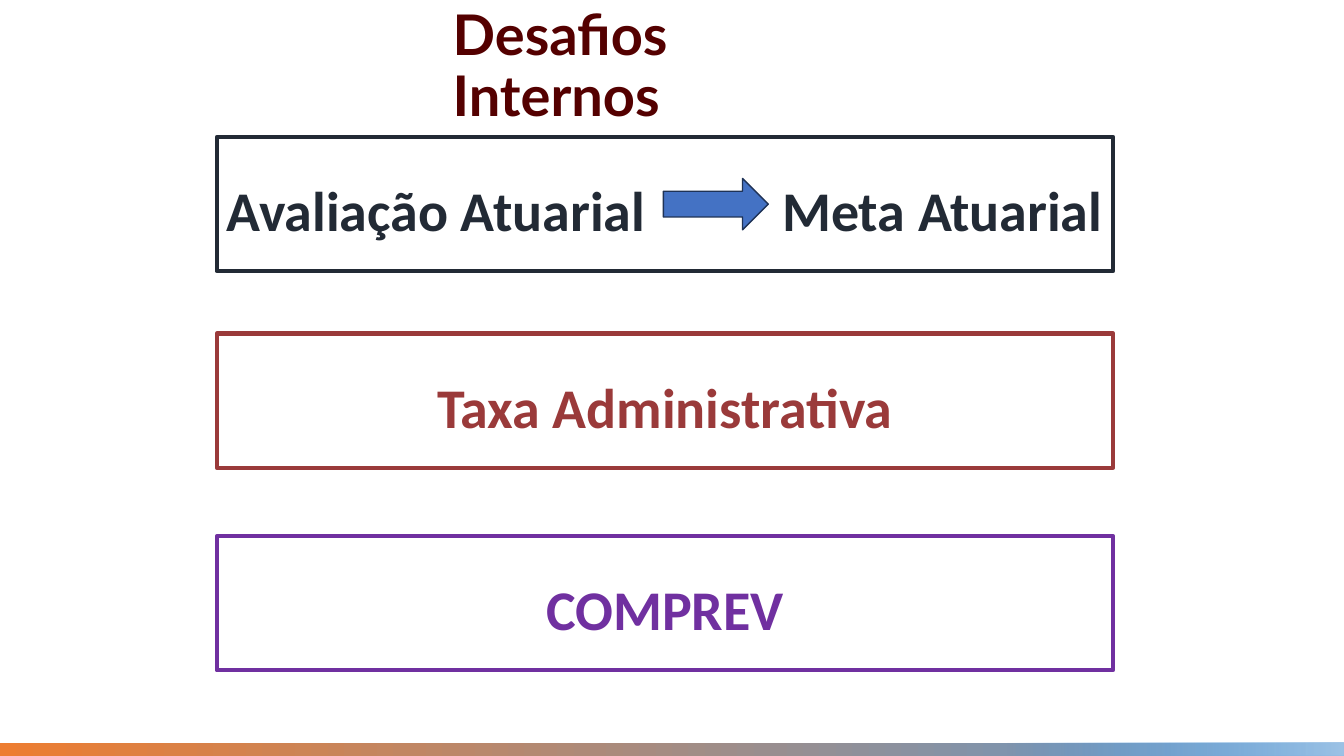
from lxml import etree
from pptx import Presentation
from pptx.dml.color import RGBColor
from pptx.enum.shapes import MSO_SHAPE
from pptx.enum.text import MSO_ANCHOR, PP_ALIGN
from pptx.oxml.ns import qn
from pptx.util import Inches, Pt

RECT, ARROW = MSO_SHAPE.RECTANGLE, MSO_SHAPE.RIGHT_ARROW
TOP, MIDDLE = MSO_ANCHOR.TOP, MSO_ANCHOR.MIDDLE
LEFT, CENTER = PP_ALIGN.LEFT, PP_ALIGN.CENTER

MAROON = RGBColor(0x54, 0x00, 0x00)
SLATE = RGBColor(0x22, 0x2A, 0x35)
RED = RGBColor(0x9A, 0x3A, 0x3A)
PURPLE = RGBColor(0x70, 0x30, 0xA0)
BLUE = RGBColor(0x44, 0x72, 0xC4)
NAVY = RGBColor(0x1E, 0x32, 0x56)
ORANGE = RGBColor(0xED, 0x7D, 0x31)
SKY = RGBColor(0x5B, 0x9B, 0xD5)
PALE = RGBColor(0x9D, 0xC3, 0xE6)


class Board:
    head, body, size = "Lato", "Calibri", Pt(40)

    def __init__(self, deck):
        self.slide = deck.slides.add_slide(deck.slide_layouts[5])

    def label(self, para, text, font, color):
        run = para.add_run()
        run.text = text
        run.font.name, run.font.size, run.font.bold = font, self.size, True
        run.font.color.rgb = color

    def title(self, text, x, y, w, h):
        box = self.slide.shapes.title
        box.left, box.top = Inches(x), Inches(y)
        box.width, box.height = Inches(w), Inches(h)
        frame = box.text_frame
        frame.word_wrap, frame.vertical_anchor = True, MIDDLE
        para = frame.paragraphs[0]
        para.alignment, para.line_spacing = LEFT, 0.9
        self.label(para, text, self.head, MAROON)

    def shape(self, kind, x, y, w, h):
        item = self.slide.shapes.add_shape(
            kind, Inches(x), Inches(y), Inches(w), Inches(h))
        item.shadow.inherit = False
        return item

    def bar(self, x, y, w, h, start, end, first=0, fade=False):
        item = self.shape(RECT, x, y, w, h)
        item.line.fill.background()
        item.fill.gradient()
        item.fill.gradient_angle = 0
        stops = item.fill.gradient_stops
        stops[0].color.rgb, stops[1].color.rgb = start, end
        stops[0].position, stops[1].position = first, 1
        if fade:
            color = next(item.element.iter(qn("a:srgbClr")))
            etree.SubElement(color, qn("a:alpha")).set("val", "0")

    def panel(self, text, x, y, w, h, color, align=CENTER, tab=None):
        item = self.shape(RECT, x, y, w, h)
        item.fill.background()
        item.line.color.rgb, item.line.width = color, Pt(3)
        frame = item.text_frame
        frame.word_wrap, frame.vertical_anchor = True, TOP
        para = frame.paragraphs[0]
        para.alignment, para.line_spacing = align, 1.5
        para.space_before = Pt(10)
        if tab:
            tabs = etree.SubElement(para._p.get_or_add_pPr(), qn("a:tabLst"))
            stop = etree.SubElement(tabs, qn("a:tab"))
            stop.set("pos", str(Inches(tab)))
            stop.set("algn", "l")
        self.label(para, text, self.body, color)

    def arrow(self, x, y, w, h):
        item = self.shape(ARROW, x, y, w, h)
        item.fill.solid()
        item.fill.fore_color.rgb = BLUE
        item.line.color.rgb, item.line.width = NAVY, Pt(1)


def main():
    deck = Presentation()
    deck.slide_width, deck.slide_height = Inches(13.33), Inches(7.5)
    board = Board(deck)

    # Footer bars
    board.bar(0, 7.37, 13.33, 0.13, ORANGE, SKY)
    board.bar(9.2, 7.37, 4.13, 0.13, SKY, PALE, first=0.19, fade=True)

    # Title
    board.title("Desafios Internos", 4.39, 0.23, 4.4, 0.89)

    # Challenges
    x, w, h = 2.15, 8.89, 1.33
    board.panel("Avaliação Atuarial\tMeta Atuarial", x, 1.36, w, h, SLATE,
                LEFT, tab=5.51)
    board.arrow(6.58, 1.77, 1.04, 0.51)
    for text, y, color in (("Taxa Administrativa", 3.31, RED),
                           ("COMPREV", 5.32, PURPLE)):
        board.panel(text, x, y, w, h, color)

    deck.save("out.pptx")


if __name__ == "__main__":
    main()
